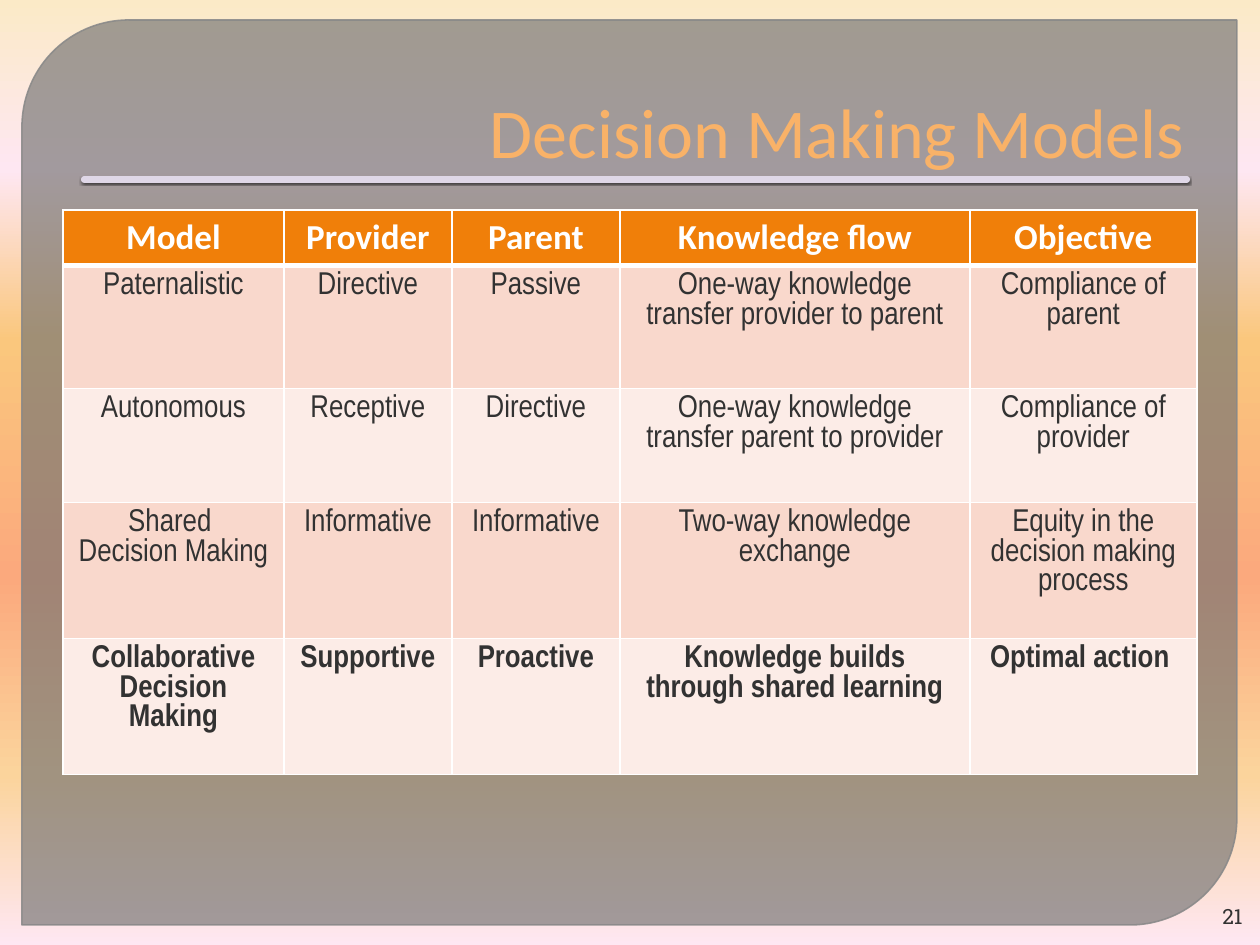
from lxml import etree
from pptx import Presentation
from pptx.dml.color import RGBColor
from pptx.enum.shapes import MSO_SHAPE
from pptx.enum.text import MSO_ANCHOR, PP_ALIGN
from pptx.oxml import parse_xml
from pptx.oxml.ns import qn
from pptx.util import Pt

PX = 7257  # EMU per px, 126 px to the inch
NS = 'xmlns:a="http://schemas.openxmlformats.org/drawingml/2006/main"'
CENTER, RIGHT = PP_ALIGN.CENTER, PP_ALIGN.RIGHT
BOTTOM, MIDDLE = MSO_ANCHOR.BOTTOM, MSO_ANCHOR.MIDDLE
PANEL, RECT = MSO_SHAPE.ROUND_2_DIAG_RECTANGLE, MSO_SHAPE.RECTANGLE

THEME = {
    "background": [(0, "FBEAC7"), (18, "FEE7F2"), (36, "FAC77D"),
                   (61, "FBA97D"), (82, "FBD49C"), (100, "FEE7F2")],
    "panel": "717171", "panel_line": "898989",
    "rule": "C4E1F2", "rule_line": "DFD7E7",
    "header": "F07F09", "bands": ["F9D8CC", "FCECE7"], "border": "FFFFFF",
    # font, size, colour
    "title": ("Calibri", 40, "F9B268"),
    "head_text": ("Calibri", 20, "FFFFFF"),
    "body_text": ("Arial Narrow", 18, "323232"),
    "number": ("Roboto Slab", 12, "323232"),
}


def style(p, kind, align, bold=False):
    name, size, color = THEME[kind]
    p.alignment = align
    p.font.name, p.font.size, p.font.bold = name, Pt(size), bold
    p.font.color.rgb = RGBColor.from_string(color)


def paint(s, fill, line, width):
    s.shadow.inherit = False
    s.fill.solid()
    s.fill.fore_color.rgb = RGBColor.from_string(fill)
    s.line.color.rgb = RGBColor.from_string(line)
    s.line.width = Pt(width)


prs = Presentation()
prs.slide_width, prs.slide_height = 1260 * PX, 945 * PX
slide = prs.slides.add_slide(prs.slide_layouts[5])
shapes = slide.shapes

# Background gradient, top to bottom
fill = slide.background.fill
fill.gradient()
fill.gradient_angle = 270
stops = slide.background._cSld.find(".//" + qn("a:gsLst"))
for gs in list(stops):
    stops.remove(gs)
for pos, color in THEME["background"]:
    stops.append(parse_xml(
        f'<a:gs {NS} pos="{pos * 1000}"><a:srgbClr val="{color}"/></a:gs>'))

# Translucent panel
panel = shapes.add_shape(PANEL, 22 * PX, 20 * PX, 1215 * PX, 905 * PX)
panel.adjustments[0], panel.adjustments[1] = 0.118, 0
paint(panel, THEME["panel"], THEME["panel_line"], 0.87)
colors = panel._element.spPr.findall(".//" + qn("a:srgbClr"))
for color, alpha in zip(colors, (65, 88)):
    etree.SubElement(color, qn("a:alpha"), val=str(alpha * 1000))

# Rule under the title, with a soft shadow
rule = shapes.add_shape(RECT, 84 * PX, 179 * PX, 1103 * PX, 1 * PX)
paint(rule, THEME["rule"], THEME["rule_line"], 3)
rule._element.spPr.find(qn("a:effectLst")).append(parse_xml(
    f'<a:outerShdw {NS} blurRad="12700" dist="12700" dir="5400000" rotWithShape="0">'
    '<a:srgbClr val="000000"><a:alpha val="75000"/></a:srgbClr></a:outerShdw>'))

# Title, moved in front of the panel
title = shapes.title
shapes._spTree.append(title._element)
title.left, title.top, title.width, title.height = 63 * PX, 21 * PX, 1134 * PX, 158 * PX
tf = title.text_frame
tf.text = "Decision Making Models"
tf.vertical_anchor = BOTTOM
style(tf.paragraphs[0], "title", RIGHT)

# Table of models
rows = [
    ["Model", "Provider", "Parent", "Knowledge flow", "Objective"],
    ["Paternalistic", "Directive", "Passive",
     "One-way knowledge transfer provider to parent", "Compliance of parent"],
    ["Autonomous", "Receptive", "Directive",
     "One-way knowledge transfer parent to provider", "Compliance of provider"],
    ["Shared \nDecision Making", "Informative", "Informative",
     "Two-way knowledge exchange", "Equity in the decision making process"],
    ["Collaborative Decision Making", "Supportive", "Proactive",
     "Knowledge builds through shared learning", "Optimal action "],
]
widths = [221, 168, 168, 350, 227]
heights = [55, 123, 114, 136, 136]
table = shapes.add_table(len(rows), len(widths), 63 * PX, 210 * PX,
                         sum(widths) * PX, sum(heights) * PX).table
for column, width in zip(table.columns, widths):
    column.width = width * PX
for r, (texts, height) in enumerate(zip(rows, heights)):
    table.rows[r].height = height * PX
    head = r == 0
    band = THEME["header"] if head else THEME["bands"][(r - 1) % 2]
    for c, text in enumerate(texts):
        cell = table.cell(r, c)
        edges = {"lnL": 1, "lnR": 1, "lnT": 3 if r == 1 else 1, "lnB": 3 if head else 1}
        for edge, points in edges.items():
            cell._tc.get_or_add_tcPr().append(parse_xml(
                f'<a:{edge} {NS} w="{Pt(points)}"><a:solidFill>'
                f'<a:srgbClr val="{THEME["border"]}"/></a:solidFill></a:{edge}>'))
        cell.fill.solid()
        cell.fill.fore_color.rgb = RGBColor.from_string(band)
        cell.text = text
        for p in cell.text_frame.paragraphs:
            style(p, "head_text" if head else "body_text", CENTER,
                  bold=head or r == len(rows) - 1)

# Slide number
number = shapes.add_textbox(1191 * PX, 897 * PX, 64 * PX, 38 * PX)
tf = number.text_frame
tf.word_wrap = True
tf.vertical_anchor = MIDDLE
tf.text = "21"
style(tf.paragraphs[0], "number", RIGHT)

prs.save("out.pptx")
